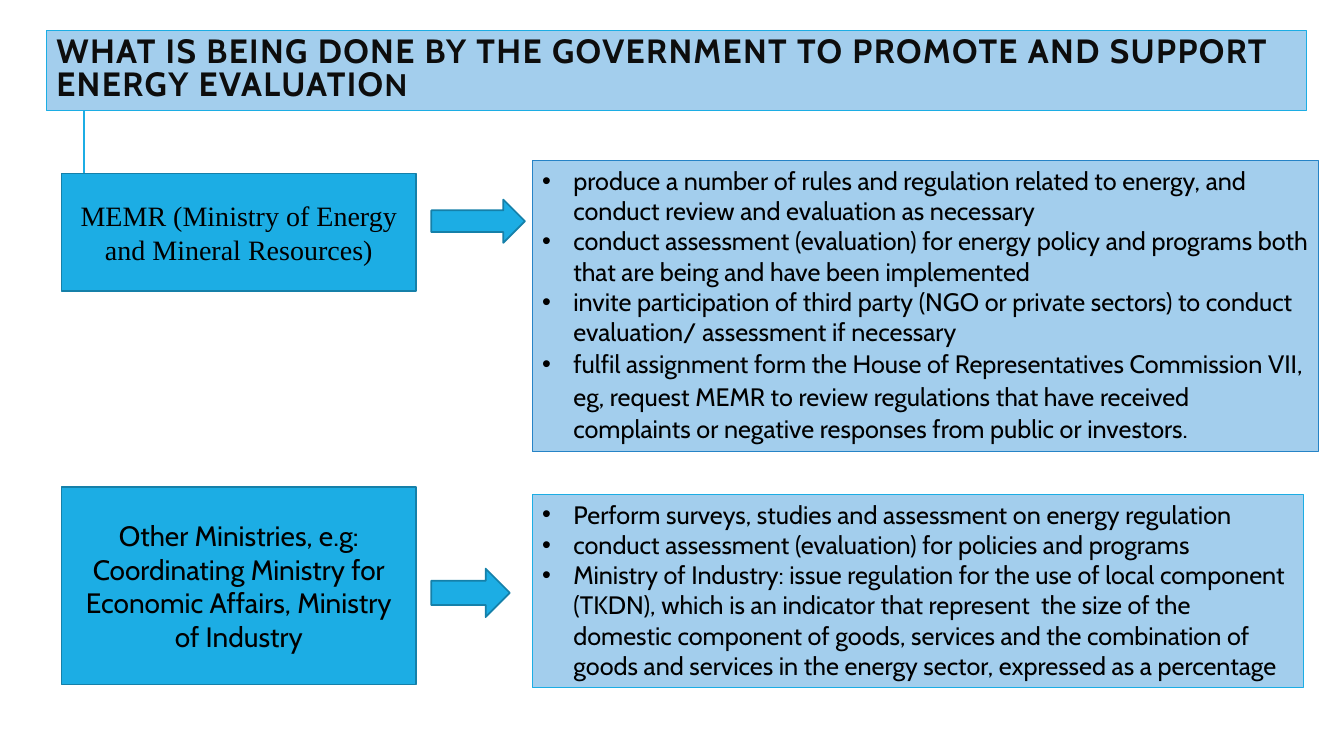
import dataclasses

import lxml.etree
import pptx
import pptx.dml.color
import pptx.enum.shapes
import pptx.enum.text
import pptx.oxml.ns
import pptx.util

Cm = pptx.util.Cm
Pt = pptx.util.Pt
SHAPE = pptx.enum.shapes.MSO_SHAPE
ALIGN = pptx.enum.text.PP_ALIGN
ANCHOR = pptx.enum.text.MSO_ANCHOR
AUTO_SIZE = pptx.enum.text.MSO_AUTO_SIZE
qn = pptx.oxml.ns.qn

BLUE, DARK_BLUE, MID_BLUE, PALE_BLUE = "1CADE4", "1580A9", "2683C6", "A3CEED"
BLACK, NEAR_BLACK = "000000", "0D0D0D"
BODY_FONT = "Cabin"
LEFT_X, ARROW_X, LIST_X = 1.55, 10.87, 13.41
BOX_WIDTH = 8.94
INDENT = Cm(0.79)


@dataclasses.dataclass
class Frame:
    """Position and size in centimetres."""
    x: float
    y: float
    w: float
    h: float


@dataclasses.dataclass
class Actor:
    """A ministry box, the arrow from it and the list of its actions."""
    name: str
    font: str
    box: Frame
    arrow: Frame
    panel: Frame
    panel_line: str
    actions: list[str]
    last_spacing: float


ACTORS = [
    Actor(
        "MEMR (Ministry of Energy and Mineral Resources)", "Times New Roman",
        Frame(LEFT_X, 4.37, BOX_WIDTH, 2.97),
        Frame(ARROW_X, 5.03, 2.36, 1.09),
        Frame(LIST_X, 4.04, 19.81, 7.34), MID_BLUE,
        ["produce a number of rules and regulation related to energy, and conduct "
         "review and evaluation as necessary",
         "conduct assessment (evaluation) for energy policy and programs both that "
         "are being and have been implemented",
         "invite participation of third party (NGO or private sectors) to conduct "
         "evaluation/ assessment if necessary",
         "fulfil assignment form the House of Representatives Commission VII, eg, "
         "request MEMR to review regulations that have received complaints or "
         "negative responses from public or investors."],
        1.07),
    Actor(
        "Other Ministries, e.g: Coordinating Ministry for Economic Affairs, "
        "Ministry of Industry", BODY_FONT,
        Frame(LEFT_X, 12.27, BOX_WIDTH, 4.98),
        Frame(ARROW_X, 14.33, 1.98, 1.22),
        Frame(LIST_X, 12.45, 19.43, 4.88), BLUE,
        ["Perform surveys, studies and assessment on energy regulation",
         "conduct assessment (evaluation) for policies and programs",
         "Ministry of Industry: issue regulation for the use of local component "
         "(TKDN), which is an indicator that represent  the size of the domestic "
         "component of goods, services and the combination of goods and services in "
         "the energy sector, expressed as a percentage"],
        1.0),
]


def rgb(color: str) -> pptx.dml.color.RGBColor:
    return pptx.dml.color.RGBColor.from_string(color)


def set_all(obj, values: dict) -> None:
    for name, value in values.items():
        setattr(obj, name, value)


def add_block(s, kind, frame: Frame, fill: str, line: str, width: float):
    sp = s.shapes.add_shape(kind, Cm(frame.x), Cm(frame.y), Cm(frame.w), Cm(frame.h))
    sp.shadow.inherit = False
    sp.fill.solid()
    sp.fill.fore_color.rgb = rgb(fill)
    sp.line.color.rgb = rgb(line)
    sp.line.width = Pt(width)
    return sp


def add_run(p, text: str, color: str, **font):
    r = p.add_run()
    r.text = text
    r.font.color.rgb = rgb(color)
    set_all(r.font, font)
    return r


def add_bullet(p) -> None:
    pPr = p._p.get_or_add_pPr()
    pPr.set("marL", str(INDENT))
    pPr.set("indent", str(-INDENT))
    lxml.etree.SubElement(pPr, qn("a:buFont")).set("typeface", "Arial")
    lxml.etree.SubElement(pPr, qn("a:buChar")).set("char", "•")


def add_title(s) -> None:
    sp = add_block(s, SHAPE.RECTANGLE, Frame(1.17, 0.76, 31.75, 2.03),
                   PALE_BLUE, BLUE, 0.75)
    tf = sp.text_frame
    set_all(tf, {"word_wrap": True, "vertical_anchor": ANCHOR.MIDDLE})
    p = tf.paragraphs[0]
    set_all(p, {"alignment": ALIGN.LEFT, "line_spacing": 0.8})
    title = ("WHAT IS BEING DONE BY THE GOVERNMENT TO PROMOTE AND SUPPORT "
             "ENERGY EVALUATIO")
    for text, font in ((title, BODY_FONT), ("N", "Calibri")):
        r = add_run(p, text, NEAR_BLACK, name=font, size=Pt(24), bold=True)
        r._r.get_or_add_rPr().set("spc", "100")


def add_title_link(s) -> None:
    cx = s.shapes.add_connector(pptx.enum.shapes.MSO_CONNECTOR.STRAIGHT,
                                Cm(2.11), Cm(4.83), Cm(2.11), Cm(2.29))
    cx.line.color.rgb = rgb(BLUE)
    cx.line.width = Pt(1.5)
    lxml.etree.SubElement(cx._element.spPr, qn("a:effectLst"))


def add_actor(s, actor: Actor) -> None:
    sp = add_block(s, SHAPE.RECTANGLE, actor.box, BLUE, DARK_BLUE, 1.25)
    tf = sp.text_frame
    set_all(tf, {"word_wrap": True, "vertical_anchor": ANCHOR.MIDDLE})
    p = tf.paragraphs[0]
    p.alignment = ALIGN.CENTER
    add_run(p, actor.name, BLACK, name=actor.font, size=Pt(20))

    add_block(s, SHAPE.RIGHT_ARROW, actor.arrow, BLUE, DARK_BLUE, 1.25)

    sp = add_block(s, SHAPE.RECTANGLE, actor.panel, PALE_BLUE, actor.panel_line, 0.75)
    tf = sp.text_frame
    set_all(tf, {"word_wrap": True, "vertical_anchor": ANCHOR.TOP,
                 "auto_size": AUTO_SIZE.SHAPE_TO_FIT_TEXT})
    for i, action in enumerate(actor.actions):
        p = tf.add_paragraph() if i else tf.paragraphs[0]
        set_all(p, {"alignment": ALIGN.LEFT, "line_spacing": 1.0})
        add_bullet(p)
        add_run(p, action, BLACK, name=BODY_FONT, size=Pt(18))
    p.line_spacing = actor.last_spacing


def main() -> None:
    prs = pptx.Presentation()
    set_all(prs, {"slide_width": Cm(33.87), "slide_height": Cm(19.05)})
    s = prs.slides.add_slide(prs.slide_layouts[6])
    add_title_link(s)
    add_title(s)
    for actor in ACTORS:
        add_actor(s, actor)
    prs.save("out.pptx")


if __name__ == "__main__":
    main()
